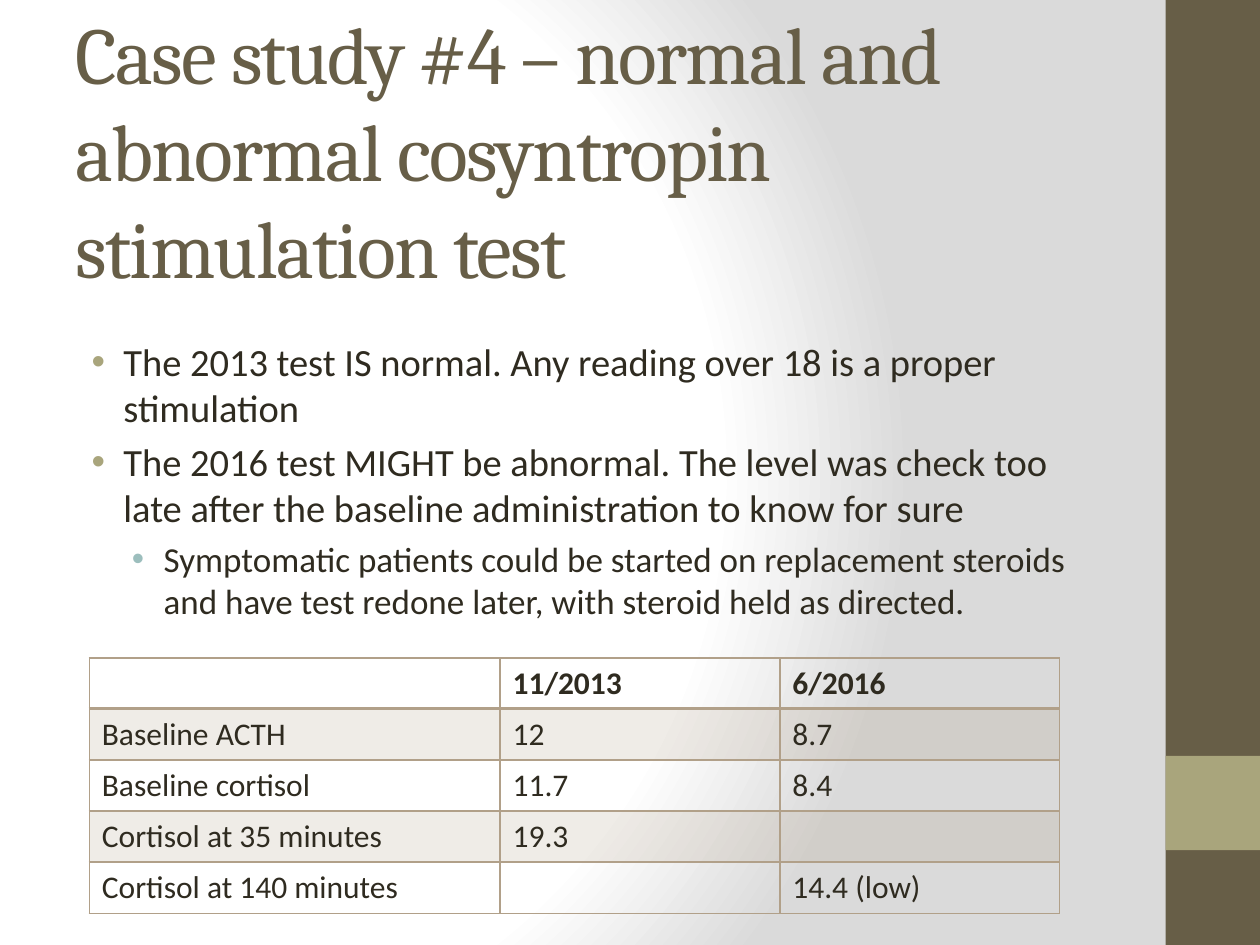
import pptx
import pptx.dml.color
import pptx.enum.shapes
import pptx.enum.text
import pptx.oxml
import pptx.oxml.ns
import pptx.util

Cm, Pt = pptx.util.Cm, pptx.util.Pt
NS = 'xmlns:a="http://schemas.openxmlformats.org/drawingml/2006/main"'
BROWN, OLIVE, TEAL, TAN, INK = "675E47", "A9A57C", "9CBEBD", "B1A089", "2F2B20"
ROWS = [
    ["", "11/2013", "6/2016"],
    ["Baseline ACTH", "12", "8.7"],
    ["Baseline cortisol", "11.7", "8.4"],
    ["Cortisol at 35 minutes", "19.3", ""],
    ["Cortisol at 140 minutes", "", "14.4 (low)"],
]
POINTS = [
    (0, "The 2013 test IS normal. Any reading over 18 is a proper stimulation"),
    (0, "The 2016 test MIGHT be abnormal. The level was check too late after "
        "the baseline administration to know for sure"),
    (1, "Symptomatic patients could be started on replacement steroids and "
        "have test redone later, with steroid held as directed."),
]
# Size in points, left margin in cm and bullet colour for each level
LEVELS = [(22, 0.97, OLIVE), (20, 1.78, TEAL)]


def color(code):
    return pptx.dml.color.RGBColor.from_string(code)


def node(text):
    """Make a drawing element; the first space in text takes the namespace."""
    return pptx.oxml.parse_xml(text.replace(" ", f" {NS} ", 1))


class Deck:
    head, body = "Cambria", "Calibri"

    def __init__(self):
        self.prs = pptx.Presentation()
        self.prs.slide_width, self.prs.slide_height = Cm(25.4), Cm(19.05)
        self.slide = self.prs.slides.add_slide(self.prs.slide_layouts[5])

    def glow(self, stops):
        """Fill the background with a round gradient."""
        self.slide.background.fill.solid()
        tag = pptx.oxml.ns.qn("p:bgPr")
        back = next(self.slide.element.iter(tag))
        marks = "".join(
            f'<a:gs pos="{pos * 1000}"><a:srgbClr val="{code}"/></a:gs>'
            for pos, code in stops)
        back.replace(back[0], node(
            f'<a:gradFill rotWithShape="1"><a:gsLst>{marks}</a:gsLst>'
            '<a:path path="circle"><a:fillToRect l="20000" t="50000" '
            'r="100000" b="50000"/></a:path></a:gradFill>'))

    def bar(self, top, high, code):
        kind = pptx.enum.shapes.MSO_SHAPE.RECTANGLE
        box = self.slide.shapes.add_shape(
            kind, Cm(23.5), Cm(top), Cm(1.9), Cm(high))
        box.shadow.inherit = False
        box.fill.solid()
        box.fill.fore_color.rgb = color(code)
        box.line.fill.background()

    def run(self, para, text, size, code=INK, face=body, bold=False):
        run = para.add_run()
        run.text = text
        run.font.size, run.font.name, run.font.bold = Pt(size), face, bold
        run.font.color.rgb = color(code)
        return run

    def title(self, text):
        box = self.slide.shapes.title
        box.left, box.top = Cm(1.27), Cm(1.42)
        box.width, box.height = Cm(21.16), Cm(3.18)
        frame = box.text_frame
        frame.word_wrap = True
        frame.auto_size = pptx.enum.text.MSO_AUTO_SIZE.NONE
        frame.vertical_anchor = pptx.enum.text.MSO_ANCHOR.MIDDLE
        para = frame.paragraphs[0]
        para.alignment = pptx.enum.text.PP_ALIGN.LEFT
        run = self.run(para, text, 46, BROWN, self.head)
        run.font._element.set("spc", "-100")

    def bullets(self, points):
        box = self.slide.shapes.add_textbox(
            Cm(1.27), Cm(4.45), Cm(21.16), Cm(13.34))
        frame = box.text_frame
        frame.word_wrap = True
        frame.margin_top = Cm(2.36)
        for i, (level, text) in enumerate(points):
            para = frame.add_paragraph() if i else frame.paragraphs[0]
            size, left, code = LEVELS[level]
            para.level = level
            para.space_before = Pt(size * 0.2 if i else 0)
            props = para._p.get_or_add_pPr()
            props.set("marL", str(Cm(left)))
            props.set("indent", str(Cm(-0.64)))
            props.append(node(
                f'<a:buClr ><a:srgbClr val="{code}"/></a:buClr>'))
            props.append(node('<a:buFont typeface="Arial"/>'))
            props.append(node('<a:buChar char="•"/>'))
            self.run(para, text, size)

    def edge(self, cell, sides):
        """Draw the cell borders, given as widths by side."""
        props = cell._tc.get_or_add_tcPr()
        for i, (side, width) in enumerate(sides.items()):
            props.insert(i, node(
                f'<a:ln{side} w="{Pt(width)}"><a:solidFill><a:srgbClr '
                f'val="{TAN}"/></a:solidFill></a:ln{side}>'))

    def table(self, rows, widths, high):
        grid = self.slide.shapes.add_table(
            len(rows), len(widths), Cm(1.8), Cm(13.26),
            Cm(sum(widths)), Cm(high * len(rows))).table
        grid.horz_banding = False
        for col, wide in zip(grid.columns, widths):
            col.width = Cm(wide)
        for r, row in enumerate(rows):
            grid.rows[r].height = Cm(high)
            for c, text in enumerate(row):
                cell = grid.cell(r, c)
                if r % 2:
                    cell.fill.solid()
                    cell.fill.fore_color.rgb = color(TAN)
                    tint = next(cell._tc.tcPr.iter(
                        pptx.oxml.ns.qn("a:srgbClr")))
                    tint.append(node('<a:alpha val="20000"/>'))
                else:
                    cell.fill.background()
                self.edge(cell, {"L": 1, "R": 1, "T": 2 if r == 1 else 1,
                                 "B": 2 if r == 0 else 1})
                if text:
                    self.run(cell.text_frame.paragraphs[0], text, 18,
                             bold=r == 0)


def main():
    deck = Deck()
    deck.glow([(0, "FFFFFF"), (75, "FFFFFF"), (100, "DADADA")])
    deck.bar(0, 19.05, BROWN)
    deck.bar(15.24, 1.9, OLIVE)
    deck.title("Case study #4 – normal and abnormal cosyntropin "
               "stimulation test")
    deck.bullets(POINTS)
    deck.table(ROWS, [8.28, 5.64, 5.64], 1.03)
    deck.prs.save("out.pptx")


if __name__ == "__main__":
    main()
